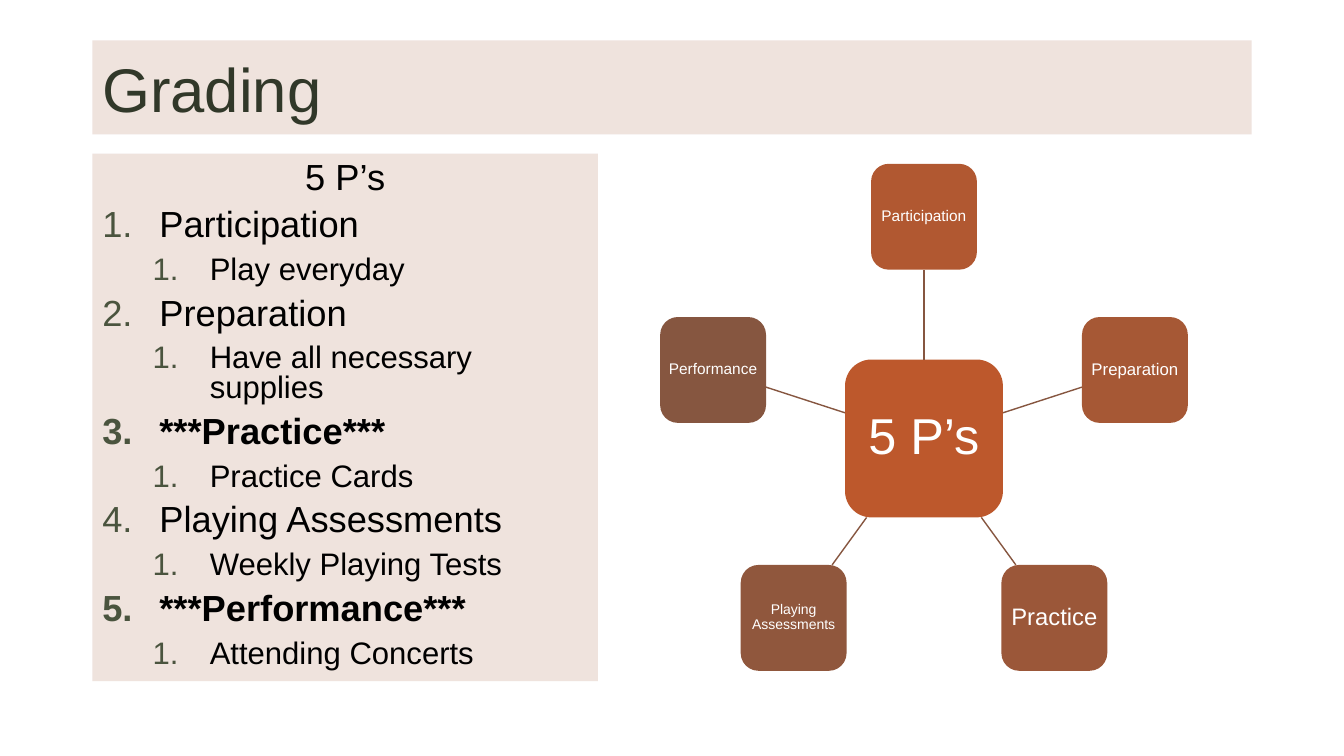
from math import cos, radians, sin

from lxml.etree import SubElement
from pptx import Presentation
from pptx.dml.color import RGBColor
from pptx.enum.shapes import MSO_CONNECTOR, MSO_SHAPE
from pptx.enum.text import MSO_ANCHOR, PP_ALIGN
from pptx.oxml.ns import qn
from pptx.util import Inches, Pt

COLS, ROWS = 80, 45
WIDTH, HEIGHT = Inches(13.333), Inches(7.5)
FONT = "Arial"

SAND = RGBColor(0xEB, 0xDC, 0xD5)
PINE = RGBColor(0x31, 0x38, 0x29)
MOSS = RGBColor(0x4A, 0x54, 0x3E)
BLACK = RGBColor(0, 0, 0)
WHITE = RGBColor(0xFF, 0xFF, 0xFF)
RUST = RGBColor(0xBD, 0x58, 0x2C)
BROWN = RGBColor(0x86, 0x56, 0x40)

HUB_X, HUB_Y = 55, 26.1
HUB_SIZE, NODE_SIZE, REACH = 9.4, 6.3, 13.2
NODES = [
    ("Participation", 11, RGBColor(0xB1, 0x58, 0x31)),
    ("Preparation", 12, RGBColor(0xA6, 0x58, 0x35)),
    ("Practice", 17, RGBColor(0x9B, 0x57, 0x39)),
    ("Playing Assessments", 10, RGBColor(0x90, 0x57, 0x3D)),
    ("Performance", 11, BROWN),
]
GRADES = [
    ("Participation", "Play everyday", False),
    ("Preparation", "Have all necessary supplies", False),
    ("***Practice***", "Practice Cards", True),
    ("Playing Assessments", "Weekly Playing Tests", False),
    ("***Performance***", "Attending Concerts", True),
]


def col(n):
    return round(WIDTH * n / COLS)


def row(n):
    return round(HEIGHT * n / ROWS)


def add_run(para, text, size, color, bold=False):
    run = para.add_run()
    run.text = text
    font = run.font
    font.name, font.size, font.bold = FONT, Pt(size), bold
    font.color.rgb = color


def add_block(slide, kind, x, y, w, h, color):
    block = slide.shapes.add_shape(kind, col(x), row(y), col(w), row(h))
    block.shadow.inherit = False
    block.fill.solid()
    block.fill.fore_color.rgb = color
    block.line.fill.background()
    block.text_frame.word_wrap = True
    return block


def add_panel(slide, x, y, w, h):
    panel = add_block(slide, MSO_SHAPE.RECTANGLE, x, y, w, h, SAND)
    tint = panel.fill._xPr.find(qn("a:solidFill"))[0]
    SubElement(tint, qn("a:alpha"), val="80000")
    return panel


def add_node(slide, x, y, side, text, size, color):
    node = add_block(slide, MSO_SHAPE.ROUNDED_RECTANGLE,
                     x - side / 2, y - side / 2, side, side, color)
    frame = node.text_frame
    frame.vertical_anchor = MSO_ANCHOR.MIDDLE
    frame.margin_left = frame.margin_right = col(0.2)
    frame.margin_top = frame.margin_bottom = row(0.2)
    para = frame.paragraphs[0]
    para.alignment = PP_ALIGN.CENTER
    para.line_spacing = 0.9
    add_run(para, text, size, WHITE)
    return node


def add_spoke(slide, start, end):
    spoke = slide.shapes.add_connector(
        MSO_CONNECTOR.STRAIGHT, col(start[0]), row(start[1]),
        col(end[0]), row(end[1]))
    spoke.line.color.rgb = BROWN
    spoke.line.width = Pt(1)
    SubElement(spoke._element.spPr, qn("a:effectLst"))
    return spoke


def add_wheel(slide):
    hub = add_node(slide, HUB_X, HUB_Y, HUB_SIZE, "5 P’s", 36, RUST)
    for i, (text, size, color) in enumerate(NODES):
        angle = radians(360 / len(NODES) * i - 90)
        dx, dy = cos(angle), sin(angle)
        edge = max(abs(dx), abs(dy))

        def point(dist):
            return HUB_X + dx * dist, HUB_Y + dy * dist

        spoke = add_spoke(slide, point(HUB_SIZE / 2 / edge),
                          point(REACH - NODE_SIZE / 2 / edge))
        node = add_node(slide, *point(REACH), NODE_SIZE, text, size, color)
        if i == 0:
            spoke.begin_connect(hub, 0)
            spoke.end_connect(node, 2)


def add_item(frame, text, level, size, bold=False):
    para = frame.add_paragraph()
    para.level = level
    props = para._p.get_or_add_pPr()
    props.set("marL", str(col(3.4 + 3 * level)))
    props.set("indent", str(-col(3.4)))
    tint = SubElement(props, qn("a:buClr"))
    SubElement(tint, qn("a:srgbClr"), val=str(MOSS))
    SubElement(props, qn("a:buFont"), typeface=FONT)
    SubElement(props, qn("a:buAutoNum"), type="arabicPeriod")
    para.alignment = PP_ALIGN.LEFT
    para.line_spacing = 0.8
    para.space_before = Pt(8.5)
    add_run(para, text, size, BLACK, bold)


def add_title(slide):
    frame = add_panel(slide, 5.5, 2.4, 69, 5.6).text_frame
    frame.vertical_anchor = MSO_ANCHOR.MIDDLE
    para = frame.paragraphs[0]
    para.alignment = PP_ALIGN.LEFT
    add_run(para, "Grading", 44, PINE)


def add_list(slide):
    frame = add_panel(slide, 5.5, 9.15, 30.1, 31.4).text_frame
    frame.vertical_anchor = MSO_ANCHOR.TOP
    frame.margin_top = row(0.55)
    head = frame.paragraphs[0]
    head.alignment = PP_ALIGN.CENTER
    head.line_spacing = 0.8
    add_run(head, "5 P’s", 25.9, BLACK)
    for grade, task, bold in GRADES:
        add_item(frame, grade, 0, 25.9, bold)
        add_item(frame, task, 1, 22.2)


def main():
    deck = Presentation()
    deck.slide_width, deck.slide_height = WIDTH, HEIGHT
    slide = deck.slides.add_slide(deck.slide_layouts[6])
    add_title(slide)
    add_wheel(slide)
    add_list(slide)
    deck.save("out.pptx")


if __name__ == "__main__":
    main()
